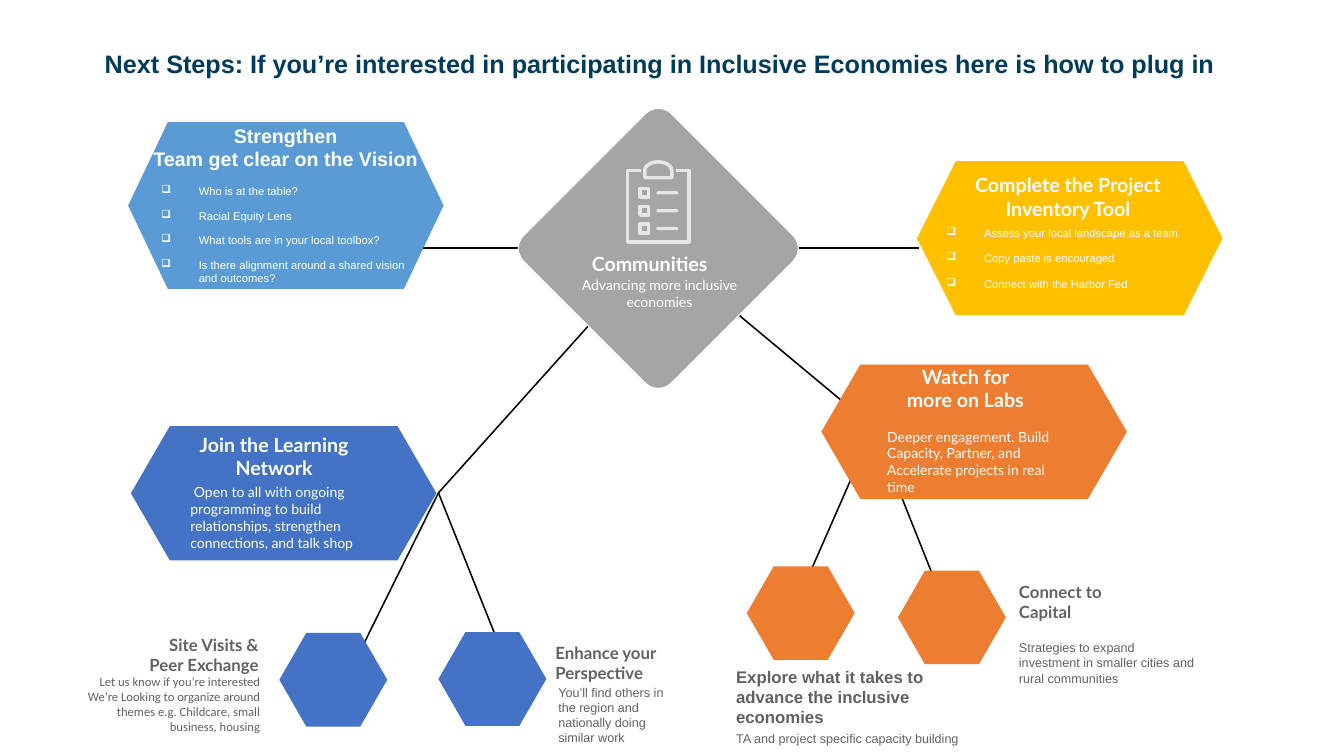
from math import cos, pi, sin

from lxml import etree
from pptx import Presentation
from pptx.dml.color import RGBColor
from pptx.enum.shapes import MSO_CONNECTOR, MSO_SHAPE
from pptx.enum.text import MSO_ANCHOR, PP_ALIGN
from pptx.oxml.ns import qn
from pptx.util import Cm, Pt

LEFT, CENTER, RIGHT = PP_ALIGN.LEFT, PP_ALIGN.CENTER, PP_ALIGN.RIGHT
TOP = MSO_ANCHOR.TOP
STRAIGHT = MSO_CONNECTOR.STRAIGHT
HEXAGON, RECTANGLE = MSO_SHAPE.HEXAGON, MSO_SHAPE.RECTANGLE
ROUNDED = MSO_SHAPE.ROUNDED_RECTANGLE

COLORS = {
    "navy": "003A5D", "black": "000000", "white": "FFFFFF", "pale": "FDFFFE",
    "gray": "A5A5A5", "text": "606160", "icon": "E7E6E6", "yellow": "FFC000",
    "sky": "5B9BD5", "orange": "ED7D31", "blue": "4472C4",
}

# All positions and lengths below are in centimetres.
BRANCH_LINES = [
    ((22.02, 10.77), (23.52, 14.53)),
    ((11.05, 12.42), (12.55, 16.18)),
    ((10.01, 6.25), (23.16, 6.25)),
]
MAIN_PATH = [(9.19, 16.18), (11.05, 12.42), (16.59, 6.25), (22.02, 10.77), (20.37, 14.53)]
HUB = {"x": 16.59, "y": 6.26, "side": 5.26, "radius": 0.46}

# color, left, top, width, height, inset of the side points
STEPS = [
    ("yellow", 23.11, 4.06, 7.7, 3.89, 0.98),
    ("sky", 3.23, 3.08, 7.95, 4.2, 1),
    ("orange", 20.7, 9.19, 7.7, 3.38, 0.98),
    ("blue", 3.3, 10.74, 7.7, 3.38, 0.98),
]
SUBSTEPS = [("orange", 22.63, 14.38), ("orange", 18.82, 14.27),
            ("blue", 11.05, 15.93), ("blue", 7.04, 15.95)]
SUBSTEP_SIZE = (2.72, 2.36, 0.68)

STEP_HEAD = {"size": 14, "bold": True, "color": "pale", "align": CENTER}
STEP_BODY = {"size": 10, "color": "pale"}
SUB_HEAD = {"size": 12, "bold": True, "color": "text"}
SUB_BODY = {"size": 9, "color": "text", "font": "Arial"}
CHECKLIST = {"size": 8, "color": "white", "font": "Arial", "bullet": "❑",
             "after": 8, "margins": (0.25, 0.13)}

# paragraphs, (left, top, width, height), format
TEXTS = [
    (["Next Steps: If you’re interested in participating in Inclusive Economies "
      "here is how to plug in"], (2.39, 1.09, 29.39, 1.02),
     {"size": 18, "bold": True, "color": "navy", "font": "Arial", "margins": (0.25, 0.13)}),
    (["Communities"], (14.76, 6.3, 3.23, 0.89), {**STEP_HEAD, "color": "white"}),
    (["Advancing more inclusive economies"], (14.45, 6.93, 4.34, 1.32),
     {**STEP_BODY, "color": "white", "align": CENTER}),
    (["Strengthen", "Team get clear on the Vision"], (3.53, 3.07, 7.34, 1.19),
     {**STEP_HEAD, "font": "Arial"}),
    (["Who is at the table?", "Racial Equity Lens", "What tools are in your local toolbox?",
      "Is there alignment around a shared vision and outcomes?"],
     (3.81, 4.52, 6.91, 2.82), CHECKLIST),
    (["Complete the Project Inventory Tool"], (24.31, 4.32, 5.21, 1.35), STEP_HEAD),
    (["Assess your local landscape as a team", "Copy paste is encouraged",
      "Connect with the Harbor Fed"], (23.6, 5.54, 7.32, 1.9), {**CHECKLIST, "spacing": 1.07}),
    (["Watch for more on Labs"], (22.63, 9.14, 3.4, 0.89), STEP_HEAD),
    (["Deeper engagement. Build Capacity, Partner, and Accelerate projects in real time"],
     (22.23, 10.74, 4.7, 1.8), STEP_BODY),
    (["Join the Learning Network"], (4.7, 10.85, 4.42, 0.89), STEP_HEAD),
    ([" Open to all with ongoing programming to build relationships, strengthen "
      "connections, and talk shop"], (4.67, 12.14, 4.7, 1.8), STEP_BODY),
    (["Site Visits & Peer Exchange"], (3.25, 15.95, 3.4, 0.89), {**SUB_HEAD, "align": RIGHT}),
    (["Let us know if you’re interested",
      "We’re Looking to organize around themes e.g. Childcare, small business, housing"],
     (1.98, 16.92, 4.7, 1.32), {**SUB_BODY, "font": "Calibri", "align": RIGHT}),
    (["Enhance your", "Perspective"], (13.87, 16.15, 3.4, 0.89), SUB_HEAD),
    (["You’ll find others in the region and nationally doing similar work"],
     (13.82, 17.12, 3.58, 1.8), {**SUB_BODY, "margins": (0.25, 0.13)}),
    (["Explore what it takes to advance the inclusive economies"],
     (18.42, 16.74, 5.99, 1.7), {**SUB_HEAD, "font": "Arial"}),
    (["TA and project specific capacity building"], (18.42, 18.36, 6.81, 0.5), SUB_BODY),
    (["Connect to Capital"], (25.55, 14.61, 3.4, 0.89), SUB_HEAD),
    (["Strategies to expand investment in smaller cities and rural communities"],
     (25.55, 16.08, 4.7, 1.2), SUB_BODY),
]

prs = Presentation()
prs.slide_width, prs.slide_height = Cm(33.87), Cm(19.05)
slide = prs.slides.add_slide(prs.slide_layouts[6])
shapes = slide.shapes


def rgb(color):
    return RGBColor.from_string(COLORS[color])


def paint(shape, fill=None, line=None, width=0.75):
    shape.shadow.inherit = False
    if fill:
        shape.fill.solid()
        shape.fill.fore_color.rgb = rgb(fill)
    else:
        shape.fill.background()
    if line:
        shape.line.color.rgb = rgb(line)
        shape.line.width = Pt(width)
    else:
        shape.line.fill.background()
    return shape


def add_preset(preset, box, **style):
    return paint(shapes.add_shape(preset, *map(Cm, box)), **style)


def add_path(points, close=False, **style):
    (x, y), *rest = [(Cm(px), Cm(py)) for px, py in points]
    builder = shapes.build_freeform(x, y)
    builder.add_line_segments(rest, close=close)
    return paint(builder.convert_to_shape(), **style)


def add_hexagon(color, left, top, width, height, inset):
    hexagon = add_preset(HEXAGON, (left, top, width, height), fill=color)
    hexagon.adjustments[0] = inset / min(width, height)


def add_text(paragraphs, box, size, color, font="Lato", bold=False, align=LEFT,
             margins=(0.13, 0.05), bullet=None, after=0, spacing=None):
    frame = shapes.add_textbox(*map(Cm, box)).text_frame
    frame.word_wrap = True
    frame.vertical_anchor = TOP
    frame.margin_left = frame.margin_right = Cm(margins[0])
    frame.margin_top = frame.margin_bottom = Cm(margins[1])
    for i, text in enumerate(paragraphs):
        paragraph = frame.paragraphs[0] if i == 0 else frame.add_paragraph()
        paragraph.alignment = align
        paragraph.space_after = Pt(after)
        if spacing:
            paragraph.line_spacing = spacing
        if bullet:
            props = paragraph._p.get_or_add_pPr()
            props.set("marL", str(Cm(0.95)))
            props.set("indent", str(-Cm(0.95)))
            etree.SubElement(props, qn("a:buChar")).set("char", bullet)
        run = paragraph.add_run()
        run.text = text
        run.font.name, run.font.size, run.font.bold = font, Pt(size), bold
        run.font.color.rgb = rgb(color)


def add_clipboard(x):
    """Draw the checklist icon centred on x."""
    stroke = {"line": "icon", "width": 2.5}
    half, gap, top, bottom = 0.77, 0.44, 4.3, 6.1
    add_path([(x - gap, top), (x - half, top), (x - half, bottom),
              (x + half, bottom), (x + half, top), (x + gap, top)], **stroke)
    arc = [(x - 0.34 * cos(pi * i / 16), top - 0.22 * sin(pi * i / 16)) for i in range(17)]
    add_path([(x - 0.34, 4.48), *arc, (x + 0.34, 4.48)], close=True, **stroke)
    for row in range(3):
        y = 4.86 + 0.45 * row
        add_preset(RECTANGLE, (x - 0.46, y - 0.11, 0.22, 0.22), **stroke)
        bar = add_preset(ROUNDED, (x - 0.05, y - 0.04, 0.55, 0.08), fill="icon")
        bar.adjustments[0] = 0.5


for start, end in BRANCH_LINES:
    branch = shapes.add_connector(STRAIGHT, *map(Cm, start + end))
    branch.line.color.rgb = rgb("black")
    branch.line.width = Pt(1.11)
    etree.SubElement(branch._element.spPr, qn("a:effectLst"))
add_path(MAIN_PATH, line="black", width=1.11)

side = HUB["side"]
hub = add_preset(ROUNDED, (HUB["x"] - side / 2, HUB["y"] - side / 2, side, side),
                 fill="gray", line="white")
hub.adjustments[0] = HUB["radius"] / side
hub.rotation = 45

for step in STEPS:
    add_hexagon(*step)
for substep in SUBSTEPS:
    add_hexagon(*substep, *SUBSTEP_SIZE)
add_clipboard(HUB["x"])
for paragraphs, box, style in TEXTS:
    add_text(paragraphs, box, **style)

prs.save("out.pptx")
